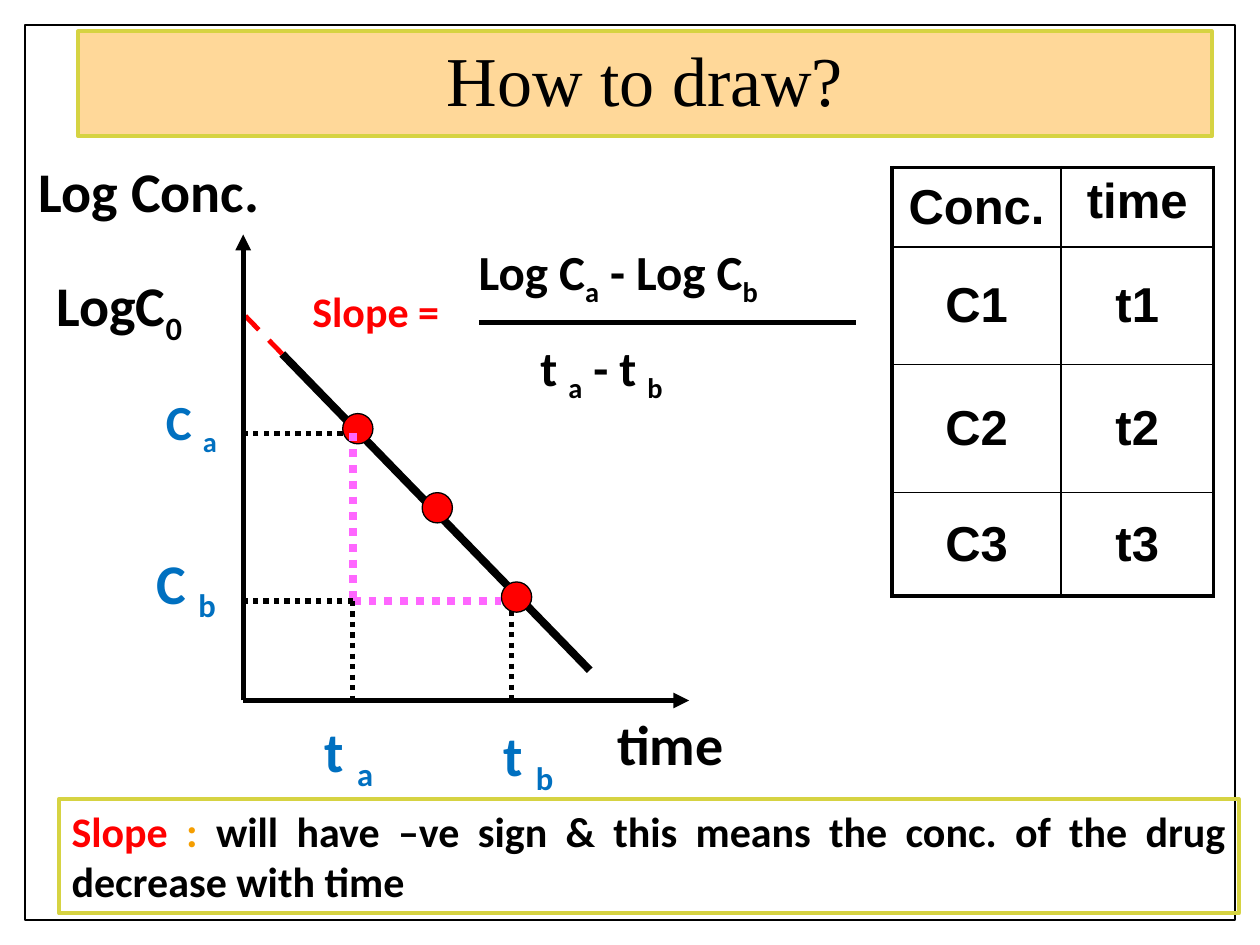
from lxml.etree import SubElement
from pptx import Presentation
from pptx.dml.color import RGBColor
from pptx.enum.dml import MSO_LINE_DASH_STYLE as Dash
from pptx.enum.shapes import MSO_CONNECTOR as Connector, MSO_SHAPE as Shape
from pptx.enum.text import MSO_ANCHOR as Anchor, PP_ALIGN as Align
from pptx.oxml.ns import qn
from pptx.util import Pt

BLACK, RED, BLUE, PINK = "000000", "FF0000", "0070C0", "FF66FF"
OLIVE, PEACH, ORANGE, WHITE = "D6D342", "FFD899", "F59E00", "FFFFFF"


def rgb(color):
    return RGBColor.from_string(color)


def write(frame, parts, size, color=BLACK, font="Calibri", bold=True, align=Align.LEFT):
    paragraph = frame.paragraphs[0]
    paragraph.alignment = align
    paragraph.font.size = Pt(size)
    paragraph.font.name = font
    paragraph.font.bold = bold
    paragraph.font.color.rgb = rgb(color)
    for part in parts:
        run = paragraph.add_run()
        run.text = part.lstrip("_")
        if part.startswith("_"):
            run._r.get_or_add_rPr().set("baseline", "-25000")
    return paragraph


def add_label(slide, box, parts, size, color=BLACK, wrap=True):
    label = slide.shapes.add_textbox(*map(Pt, box))
    label.text_frame.word_wrap = wrap
    write(label.text_frame, parts, size, color)


def add_panel(slide, kind, box, fill, line, width):
    panel = slide.shapes.add_shape(kind, *map(Pt, box))
    panel.shadow.inherit = False
    if fill:
        panel.fill.solid()
        panel.fill.fore_color.rgb = rgb(fill)
    else:
        panel.fill.background()
    panel.line.color.rgb = rgb(line)
    panel.line.width = Pt(width)
    return panel


def add_line(slide, start, end, color=BLACK, width=3, dash=None, arrow=False):
    line = slide.shapes.add_connector(Connector.STRAIGHT, *map(Pt, (*start, *end)))
    line.line.color.rgb = rgb(color)
    line.line.width = Pt(width)
    if dash:
        line.line.dash_style = dash
    if arrow:
        SubElement(line.line._get_or_add_ln(), qn("a:tailEnd"), type="triangle")
    SubElement(line._element.spPr, qn("a:effectLst"))


def add_title(slide, box):
    title = add_panel(slide, Shape.RECTANGLE, box, PEACH, OLIVE, 2.25)
    title.text_frame.vertical_anchor = Anchor.MIDDLE
    heading = write(title.text_frame, ["How to draw?"], 40, font="Times New Roman",
                    bold=False, align=Align.CENTER)
    heading.line_spacing = 0.9


def add_plot(slide, box):
    left, top, width, height = box
    right, bottom = left + width, top + height
    time_a, time_b = left + 62.6, left + 153.3
    conc_a, conc_b = top + 113.7, top + 209.4
    first = (left + 22.3, top + 68.3)
    diameter = 17.3
    radius = diameter / 2

    add_line(slide, (left, bottom), (right, bottom), arrow=True)
    add_line(slide, first, (left + 198, top + 249), width=4.5)
    for x, y in ((65.5, 111), (110.9, 156.2), (156.2, 207.2)):
        dot = (left + x - radius, top + y - radius, diameter, diameter)
        add_panel(slide, Shape.OVAL, dot, RED, BLACK, 0.75)
    add_line(slide, first, (left, top + 45.3), RED, 2.75, Dash.DASH)
    add_line(slide, (left, bottom), (left, top), arrow=True)

    corner = (time_a, conc_b)
    for start, end, color, weight in (
        ((time_a, conc_a), corner, PINK, 4.5),
        (corner, (time_b - 5.8, conc_b), PINK, 4.5),
        ((time_a - 5.8, conc_a), (left, conc_a), BLACK, 3),
        (corner, (left, conc_b), BLACK, 3),
        ((time_b, conc_b + 5.8), (time_b, bottom), BLACK, 3),
        (corner, (time_a, bottom), BLACK, 3),
    ):
        add_line(slide, start, end, color, weight, Dash.ROUND_DOT)

    for x, y, w, h, parts, size, color in (
        (-123.8, -48.2, 249.8, 45.4, ["Log Conc."], 32, BLACK),
        (206.6, 267.8, 96.5, 45.4, ["time"], 32, BLACK),
        (-113.8, 17.2, 118.8, 45.4, ["LogC", "_0"], 32, BLACK),
        (-51.2, 86.3, 67.7, 41, ["C ", "_a"], 28, BLUE),
        (-56.9, 175.6, 55, 46, ["C ", "_b"], 32, BLUE),
        (39.6, 272, 62.6, 45.4, ["t ", "_a"], 32, BLUE),
        (141.8, 274.2, 67.7, 45.4, ["t ", "_b"], 32, BLUE),
    ):
        add_label(slide, (left + x, top + y, w, h), parts, size, color)


def add_formula(slide, box):
    left, top, width, height = box
    bar = top + 49.7
    add_label(slide, (left, top + 25.2, 91.4, 36), ["Slope ="], 24, RED, wrap=False)
    add_line(slide, (left + 102.2, bar), (left + width, bar))
    add_label(slide, (left + 95, top, 300, 41), ["Log C", "_a", " - Log ", "C", "_b"], 28)
    add_label(slide, (left + 130.3, top + height - 41, 158.4, 41),
              ["t ", "_a", " - t ", "_b"], 28)


def add_data(slide, box):
    rows = [("Conc.", "time")] + [(f"C{n}", f"t{n}") for n in (1, 2, 3)]
    table = slide.shapes.add_table(len(rows), 2, *map(Pt, box)).table
    table.first_row = table.horz_banding = False
    for column, width in zip(table.columns, (96.5, 87.1)):
        column.width = Pt(width)
    for row, height in zip(table.rows, (45.4, 67, 73.4, 59)):
        row.height = Pt(height)
    for r, values in enumerate(rows):
        for c, value in enumerate(values):
            cell = table.cell(r, c)
            outer = {"L": c == 0, "R": c == 1, "T": r == 0, "B": r == len(rows) - 1}
            for side, thick in outer.items():
                border = SubElement(cell._tc.get_or_add_tcPr(), qn(f"a:ln{side}"),
                                    w=str(Pt(2.25 if thick else 1)))
                fill = SubElement(border, qn("a:solidFill"))
                SubElement(fill, qn("a:srgbClr"), val=BLACK)
            cell.fill.background()
            cell.vertical_anchor = Anchor.TOP if value == "time" else Anchor.MIDDLE
            write(cell.text_frame, [value], 28, font="Arial", align=Align.CENTER)


def add_note(slide, box):
    note = add_panel(slide, Shape.RECTANGLE, box, None, OLIVE, 2.25)
    note.text_frame.word_wrap = True
    note.text_frame.vertical_anchor = Anchor.TOP
    message = "will have –ve sign & this means the conc. of the drug decrease with time"
    sentence = write(note.text_frame, ["Slope ", ": ", message], 24, align=Align.JUSTIFY)
    for run, color in zip(sentence.runs, (RED, ORANGE)):
        run.font.color.rgb = rgb(color)


def main():
    deck = Presentation()
    deck.slide_width, deck.slide_height = Pt(720), Pt(540)
    slide = deck.slides.add_slide(deck.slide_layouts[6])
    add_panel(slide, Shape.RECTANGLE, (14.4, 14.4, 691.2, 511.2), WHITE, BLACK, 1)
    add_title(slide, (44.6, 18, 648, 59.8))
    add_plot(slide, (139, 134, 254.8, 266.3))
    add_data(slide, (509.8, 95.8, 183.6, 244.8))
    add_formula(slide, (171.4, 134.6, 317.5, 95.8))
    add_note(slide, (33.8, 456.5, 674, 65.5))
    deck.save("out.pptx")


if __name__ == "__main__":
    main()
